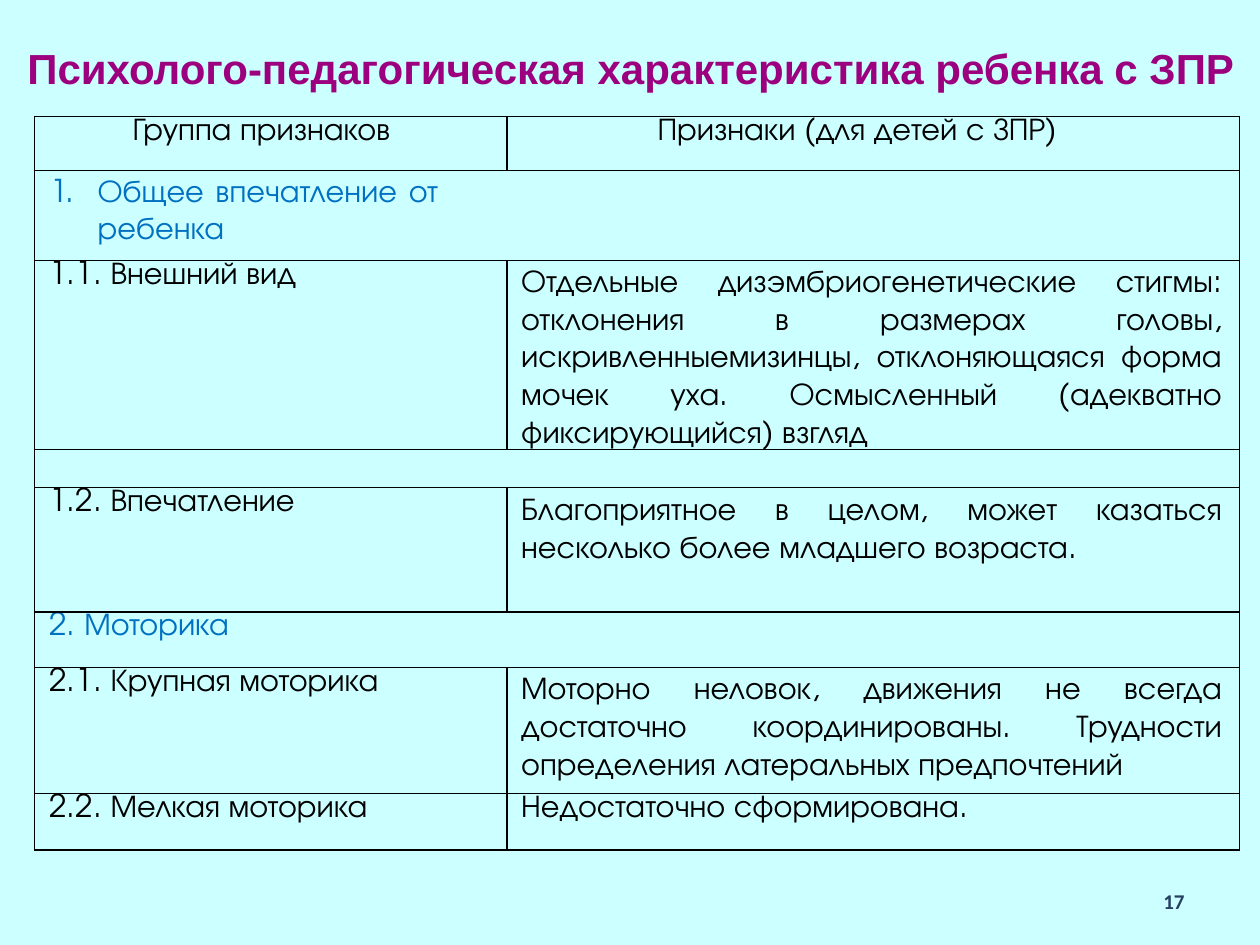
from lxml import etree
from pptx import Presentation
from pptx.dml.color import RGBColor
from pptx.enum import text
from pptx.oxml import ns
from pptx.util import Pt

BACKGROUND = RGBColor(0xCC, 0xFF, 0xFF)
TITLE_COLOR = RGBColor(0x9C, 0x00, 0x7F)
SECTION_COLOR = RGBColor(0x00, 0x70, 0xC0)
NUMBER_COLOR = RGBColor(0x25, 0x40, 0x61)
BLACK = RGBColor(0, 0, 0)
TABLE_FONT = "TeX Gyre Adventor"
JUSTIFY = text.PP_ALIGN.JUSTIFY

LABEL = dict(left=8.5)
SECTION = dict(left=8.5, color=SECTION_COLOR)
NUMBERED = dict(left=36, hanging=27, right=458, spacing=21.6, align=JUSTIFY,
                color=SECTION_COLOR, numbered=True)
SIGNS = dict(left=8, right=10, spacing=21.6, align=JUSTIFY)

# Each row: height, then (wording, format) for each cell; fewer than two cells means a merged row
ROWS = [
    (30.8, [("Группа признаков", dict(left=56)),
            ("Признаки (для детей с ЗПР)", dict(left=86))]),
    (51.6, [("Общее впечатление от ребенка", NUMBERED)]),
    (108, [("1.1. Внешний вид", LABEL),
           ("Отдельные дизэмбриогенетические стигмы: отклонения в размерах головы, "
            "искривленныемизинцы, отклоняющаяся форма мочек уха. Осмысленный "
            "(адекватно фиксирующийся) взгляд", SIGNS)]),
    (21.5, []),
    (71.2, [("1.2. Впечатление", LABEL),
            ("Благоприятное в целом, может казаться несколько более младшего возраста.",
             dict(SIGNS, spacing=22.1))]),
    (31.8, [("2. Моторика", SECTION)]),
    (71.8, [("2.1. Крупная моторика", LABEL),
            ("Моторно неловок, движения не всегда достаточно координированы. "
             "Трудности определения латеральных предпочтений", SIGNS)]),
    (32.4, [("2.2. Мелкая моторика", LABEL),
            ("Недостаточно сформирована.", dict(SIGNS, spacing=17))]),
]


def write_text(frame, wording, font=TABLE_FONT, size=18, color=BLACK, bold=False,
               align=text.PP_ALIGN.LEFT, left=0, right=0, hanging=0, spacing=None,
               numbered=False):
    paragraph = frame.paragraphs[0]
    paragraph.alignment = align
    if spacing:
        paragraph.line_spacing = Pt(spacing)
    run = paragraph.add_run()
    run.text = wording
    run.font.name = font
    run.font.size = Pt(size)
    run.font.bold = bold
    run.font.color.rgb = color
    # Indents and automatic numbering
    properties = paragraph._p.get_or_add_pPr()
    for name, length in (("marL", left), ("marR", right), ("indent", -hanging)):
        properties.set(name, str(int(Pt(length))))
    if numbered:
        etree.SubElement(properties, ns.qn("a:buAutoNum"), type="arabicPeriod")


def add_text_box(slide, box, wording, anchor=text.MSO_ANCHOR.TOP, **style):
    frame = slide.shapes.add_textbox(*map(Pt, box)).text_frame
    frame.word_wrap = True
    frame.vertical_anchor = anchor
    write_text(frame, wording, **style)


def format_cell(cell):
    cell.margin_left = cell.margin_right = cell.margin_top = cell.margin_bottom = 0
    properties = cell._tc.get_or_add_tcPr()
    for side in ("lnL", "lnR", "lnT", "lnB"):
        line = etree.SubElement(properties, ns.qn("a:" + side), w=str(int(Pt(1))))
        fill = etree.SubElement(line, ns.qn("a:solidFill"))
        etree.SubElement(fill, ns.qn("a:srgbClr"), val=str(BLACK))
    cell.fill.background()


def add_signs_table(slide, box, first_column):
    left, top, width, height = box
    table = slide.shapes.add_table(len(ROWS), 2, *map(Pt, box)).table
    table.first_row = table.horz_banding = False
    table.columns[0].width = Pt(first_column)
    table.columns[1].width = Pt(width - first_column)
    for index, (row_height, contents) in enumerate(ROWS):
        table.rows[index].height = Pt(row_height)
        cells = [table.cell(index, column) for column in range(2)]
        for cell in cells:
            format_cell(cell)
        if len(contents) < 2:
            cells[0].merge(cells[1])
        for cell, (wording, style) in zip(cells, contents):
            write_text(cell.text_frame, wording, **{"spacing": 17, **style})


def build_slide(presentation):
    slide = presentation.slides.add_slide(presentation.slide_layouts[6])
    slide.background.fill.solid()
    slide.background.fill.fore_color.rgb = BACKGROUND
    # Slide number
    add_text_box(slide, (516, 500.4, 168, 28.8), "17", anchor=text.MSO_ANCHOR.MIDDLE,
                 font="Calibri", size=12, color=NUMBER_COLOR, bold=True,
                 align=text.PP_ALIGN.RIGHT)
    # Title
    add_text_box(slide, (8.6, 21, 834, 36), "Психолого-педагогическая характеристика ребенка с ЗПР",
                 font="Arial", size=24, color=TITLE_COLOR, bold=True, align=JUSTIFY)
    # Table of signs
    add_signs_table(slide, (19.8, 66.6, 688.6, sum(row[0] for row in ROWS)), 270)


def main():
    presentation = Presentation()
    presentation.slide_width, presentation.slide_height = Pt(720), Pt(540)
    build_slide(presentation)
    presentation.save("out.pptx")


if __name__ == "__main__":
    main()
